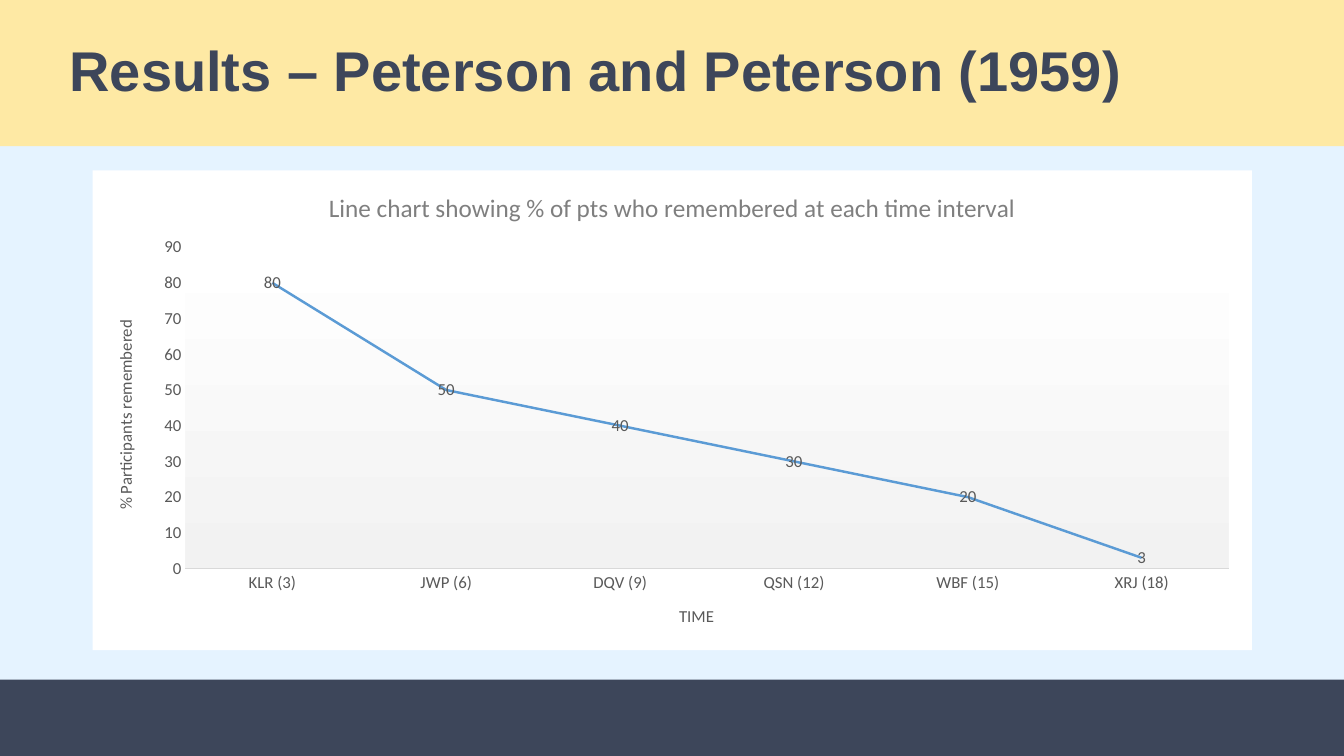
"""Build a slide with a line chart of recall over time."""
from lxml.etree import fromstring
from pptx import Presentation
from pptx.chart.data import CategoryChartData as ChartData
from pptx.dml.color import RGBColor as Rgb
from pptx.enum.chart import XL_CHART_TYPE as ChartType, XL_LABEL_POSITION as LabelPosition
from pptx.enum.chart import XL_MARKER_STYLE as MarkerStyle, XL_TICK_MARK as TickMark
from pptx.enum.shapes import MSO_SHAPE as ShapeType
from pptx.enum.text import MSO_ANCHOR as Anchor, MSO_AUTO_SIZE as AutoSize, PP_ALIGN as Align
from pptx.util import Inches, Pt

COLORS = {
    "background": "E5F3FF", "navy": "3D465A", "banner": "FEE9A4", "white": "FFFFFF",
    "shade": "F2F2F2", "line": "5B9BD5", "axis": "D9D9D9", "text": "595959", "heading": "7F7F7F",
}
FORMATS = {
    "title": {"name": "Arial", "size": Pt(40), "bold": True, "color": "navy"},
    "heading": {"name": "Calibri", "size": Pt(18), "bold": False, "color": "heading"},
    "label": {"name": "Calibri", "size": Pt(12), "bold": False, "color": "text"},
}
NAMESPACES = (
    'xmlns:c="http://schemas.openxmlformats.org/drawingml/2006/chart" '
    'xmlns:a="http://schemas.openxmlformats.org/drawingml/2006/main"'
)
RECALL = {
    "KLR (3)": 80, "JWP (6)": 50, "DQV (9)": 40,
    "QSN (12)": 30, "WBF (15)": 20, "XRJ (18)": 3,
}


def set_all(target, values):
    """Set each attribute of the target from a dict."""
    for name, value in values.items():
        setattr(target, name, value)


def chart_fill(content):
    """Return chart shape properties with the given fill."""
    return fromstring(f"<c:spPr {NAMESPACES}>{content}<a:ln><a:noFill/></a:ln></c:spPr>")


class SlideBuilder:
    """Hold the style and the current slide, on a grid of 100 columns by 100 rows."""

    def __init__(self, presentation):
        """Add a slide with the title layout and a plain background."""
        self.column = presentation.slide_width / 100
        self.row = presentation.slide_height / 100
        self.slide = presentation.slides.add_slide(presentation.slide_layouts[5])
        self.paint(self.slide.background.fill, "background")

    def place(self, left, top, width, height):
        """Turn grid units into lengths."""
        return (round(left * self.column), round(top * self.row),
                round(width * self.column), round(height * self.row))

    def paint(self, fill, color):
        """Apply a solid fill."""
        fill.solid()
        fill.fore_color.rgb = Rgb.from_string(COLORS[color])

    def style(self, font, name):
        """Apply a named text format."""
        values = dict(FORMATS[name])
        font.color.rgb = Rgb.from_string(COLORS[values.pop("color")])
        set_all(font, values)

    def band(self, area, color):
        """Add a plain rectangle."""
        shape = self.slide.shapes.add_shape(ShapeType.RECTANGLE, *self.place(*area))
        shape.shadow.inherit = False
        self.paint(shape.fill, color)
        shape.line.fill.background()

    def title(self, text, area):
        """Fill the title placeholder as a banner."""
        shape = self.slide.shapes.title
        set_all(shape, dict(zip(("left", "top", "width", "height"), self.place(*area))))
        self.paint(shape.fill, "banner")
        frame = shape.text_frame
        set_all(frame, {"text": text, "word_wrap": True, "auto_size": AutoSize.NONE,
                        "vertical_anchor": Anchor.MIDDLE, "margin_left": Inches(0.69)})
        paragraph = frame.paragraphs[0]
        set_all(paragraph, {"alignment": Align.LEFT, "line_spacing": 0.9})
        self.style(paragraph.runs[0].font, "title")

    def chart_text(self, owner, text, style):
        """Write the title of a chart or an axis."""
        owner.has_title = True
        frame = getattr(owner, "chart_title", None) or owner.axis_title
        frame.text_frame.text = text
        self.style(frame.text_frame.paragraphs[0].runs[0].font, style)

    def line_chart(self, heading, axis_titles, values, area):
        """Add a line chart with value labels."""
        data = ChartData()
        data.categories = list(values)
        data.add_series("Series 1", list(values.values()))
        chart = self.slide.shapes.add_chart(ChartType.LINE, *self.place(*area), data).chart
        chart.has_legend = False
        self.style(chart.font, "label")
        self.chart_text(chart, heading, "heading")
        chart.chart_title.include_in_layout = False
        for axis, text in zip((chart.category_axis, chart.value_axis), axis_titles):
            set_all(axis, {"has_major_gridlines": False, "major_tick_mark": TickMark.NONE,
                           "minor_tick_mark": TickMark.NONE})
            self.style(axis.tick_labels.font, "label")
            self.chart_text(axis, text, "label")
        set_all(chart.value_axis, {"minimum_scale": 0, "maximum_scale": 90, "major_unit": 10})
        chart.value_axis.format.line.fill.background()
        self.stroke(chart.category_axis.format.line, "axis", 0.75)
        self.series(chart.plots[0])
        self.backdrop(chart)

    def stroke(self, line, color, width):
        """Apply a line colour and width."""
        self.paint(line.fill, color)
        line.width = Pt(width)

    def series(self, plot):
        """Format the line and its labels."""
        plot.vary_by_categories = False
        series = plot.series[0]
        series.smooth = False
        series.marker.style = MarkerStyle.NONE
        self.stroke(series.format.line, "line", 1.75)
        labels = series.data_labels
        set_all(labels, {"show_value": True, "position": LabelPosition.CENTER})
        self.style(labels.font, "label")

    def backdrop(self, chart):
        """Fill the chart and plot areas and place the plot."""
        solid = f'<a:solidFill><a:srgbClr val="{COLORS["white"]}"/></a:solidFill>'
        stops = "".join(
            f'<a:gs pos="{position}"><a:srgbClr val="{COLORS[color]}"/></a:gs>'
            for position, color in ((0, "white"), (100000, "shade")))
        gradient = f'<a:gradFill><a:gsLst>{stops}</a:gsLst><a:lin ang="5400000" scaled="0"/></a:gradFill>'
        sizes = "".join(f'<c:{tag} val="{value}"/>' for tag, value in (
            ("layoutTarget", "inner"), ("xMode", "edge"), ("yMode", "edge"),
            ("x", 0.08), ("y", 0.16), ("w", 0.9), ("h", 0.67)))
        layout = f"<c:layout {NAMESPACES}><c:manualLayout>{sizes}</c:manualLayout></c:layout>"
        chart_area = chart.element.xpath("c:chart")[0]
        chart_area.addnext(chart_fill(solid))
        plot_area = chart_area.xpath("c:plotArea")[0]
        for old_layout in plot_area.xpath("c:layout"):
            plot_area.remove(old_layout)
        plot_area.insert(0, fromstring(layout))
        plot_area.append(chart_fill(gradient))


def main():
    """Build and save the presentation."""
    presentation = Presentation()
    set_all(presentation, {"slide_width": Inches(13.33), "slide_height": Inches(7.5)})
    builder = SlideBuilder(presentation)
    builder.band((0, 89.9, 100, 10.1), "navy")
    builder.title("Results – Peterson and Peterson (1959)", (0, 0, 100, 19.33))
    builder.line_chart("Line chart showing % of pts who remembered at each time interval",
                       ("TIME", "% Participants remembered"), RECALL, (6.9, 22.55, 86.25, 63.45))
    presentation.save("out.pptx")


if __name__ == "__main__":
    main()
